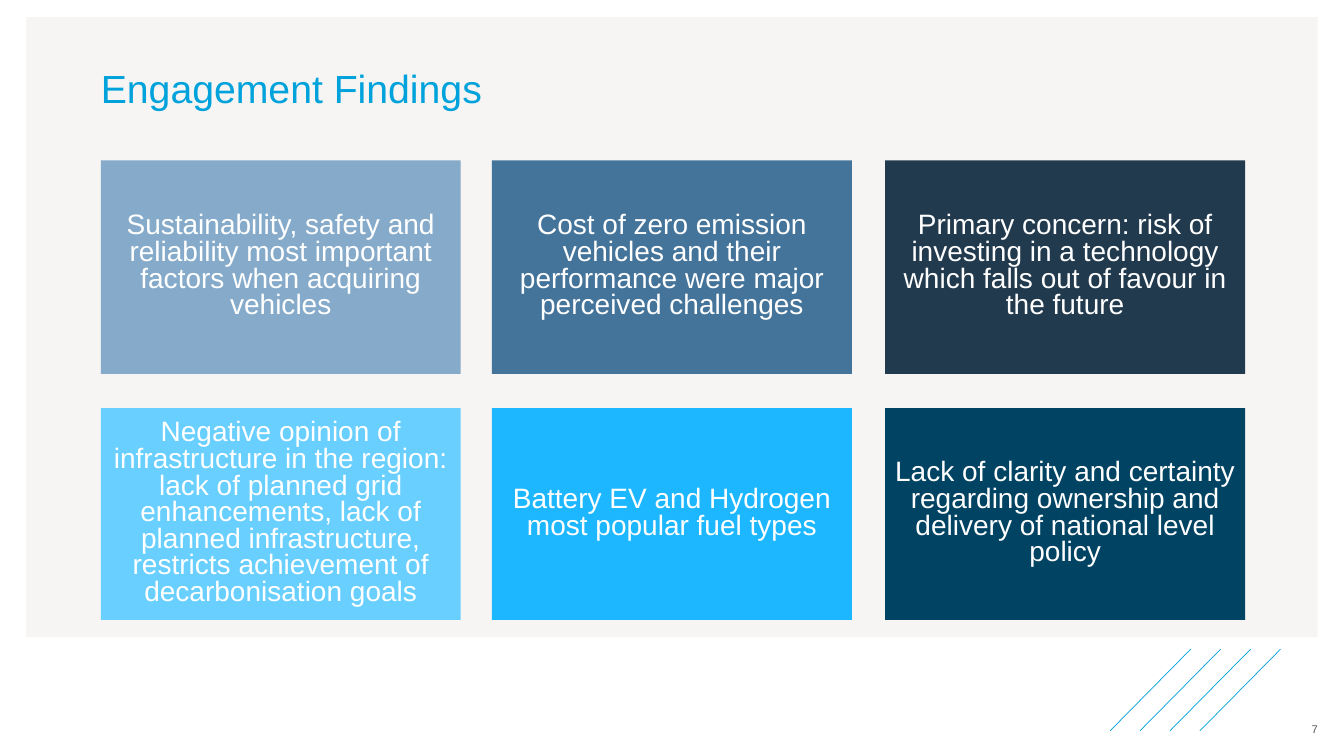
from pptx import Presentation
from pptx.dml.color import RGBColor
from pptx.enum.shapes import MSO_CONNECTOR, MSO_SHAPE
from pptx.enum.text import MSO_ANCHOR, MSO_AUTO_SIZE, PP_ALIGN
from pptx.oxml.ns import qn
from pptx.util import Inches, Pt
from lxml.etree import SubElement

COLORS = {
    "panel": "F6F5F4",
    "accent": "00A2DB",
    "card_text": "FFFFFF",
    "page_number": "58595B",
    "mist": "86ABCA",
    "steel": "45749B",
    "navy": "223A4E",
    "sky": "68CFFF",
    "azure": "1CB7FF",
    "petrol": "004363",
}
CARD_LEFTS = (1, 4.88, 8.78)
CARD_WIDTH = 3.57
# Each row: top, height, cards as (fill, finding)
CARD_ROWS = (
    (1.59, 2.12, (
        ("mist", "Sustainability, safety and reliability most important factors "
                 "when acquiring vehicles"),
        ("steel", "Cost of zero emission vehicles and their performance were "
                  "major perceived challenges"),
        ("navy", "Primary concern: risk of investing in a technology which falls "
                 "out of favour in the future"),
    )),
    (4.05, 2.1, (
        ("sky", "Negative opinion of infrastructure in the region: lack of planned "
                "grid enhancements, lack of planned infrastructure, restricts "
                "achievement of decarbonisation goals"),
        ("azure", "Battery EV and Hydrogen most popular fuel types"),
        ("petrol", "Lack of clarity and certainty regarding ownership and delivery "
                   "of national level policy"),
    )),
)


def color(name):
    return RGBColor.from_string(COLORS[name])


def write(shape, text, size, color_name, align, anchor=MSO_ANCHOR.MIDDLE, spacing=None):
    """Fill a shape with one formatted paragraph and no insets."""
    frame = shape.text_frame
    frame.text = text
    frame.word_wrap = True
    frame.auto_size = MSO_AUTO_SIZE.NONE
    frame.vertical_anchor = anchor
    frame.margin_left = frame.margin_right = frame.margin_top = frame.margin_bottom = 0
    para = frame.paragraphs[0]
    para.alignment = align
    para.line_spacing = spacing
    font = para.runs[0].font
    font.name = "Arial"
    font.size = Pt(size)
    font.color.rgb = color(color_name)


def add_block(page, left, top, width, height, fill):
    block = page.shapes.add_shape(
        MSO_SHAPE.RECTANGLE, Inches(left), Inches(top), Inches(width), Inches(height))
    block.shadow.inherit = False
    block.fill.solid()
    block.fill.fore_color.rgb = color(fill)
    block.line.fill.background()
    return block


def add_diagonals(page):
    for index in range(4):
        right = 11.81 + index * 0.297
        line = page.shapes.add_connector(
            MSO_CONNECTOR.STRAIGHT, Inches(right), Inches(6.44),
            Inches(right - 0.8), Inches(7.25))
        line.line.color.rgb = color("accent")
        line.line.width = Pt(0.5)
        SubElement(line.element.spPr, qn("a:effectLst"))


def add_cards(page):
    for top, height, cards in CARD_ROWS:
        for left, (fill, finding) in zip(CARD_LEFTS, cards):
            card = add_block(page, left, top, CARD_WIDTH, height, fill)
            write(card, finding, 20, "card_text", PP_ALIGN.CENTER, spacing=Pt(19))


def place_title(page):
    title = page.shapes.title
    title.left, title.top = Inches(1), Inches(0.4)
    title.width, title.height = Inches(11.34), Inches(1.01)
    write(title, "Engagement Findings", 28, "accent", PP_ALIGN.LEFT, spacing=0.9)
    # Bring the title in front of the panel
    page.shapes.element.append(title.element)


def add_page_number(page):
    box = page.shapes.add_textbox(Inches(12.55), Inches(7.09), Inches(0.52), Inches(0.21))
    write(box, "7", 8, "page_number", PP_ALIGN.RIGHT, anchor=MSO_ANCHOR.BOTTOM)


def main():
    deck = Presentation()
    deck.slide_width, deck.slide_height = Inches(13.33), Inches(7.5)
    page = deck.slides.add_slide(deck.slide_layouts.get_by_name("Title Only"))
    add_block(page, 0.26, 0.17, 12.81, 6.15, "panel")
    add_diagonals(page)
    add_cards(page)
    place_title(page)
    add_page_number(page)
    deck.save("out.pptx")


if __name__ == "__main__":
    main()
